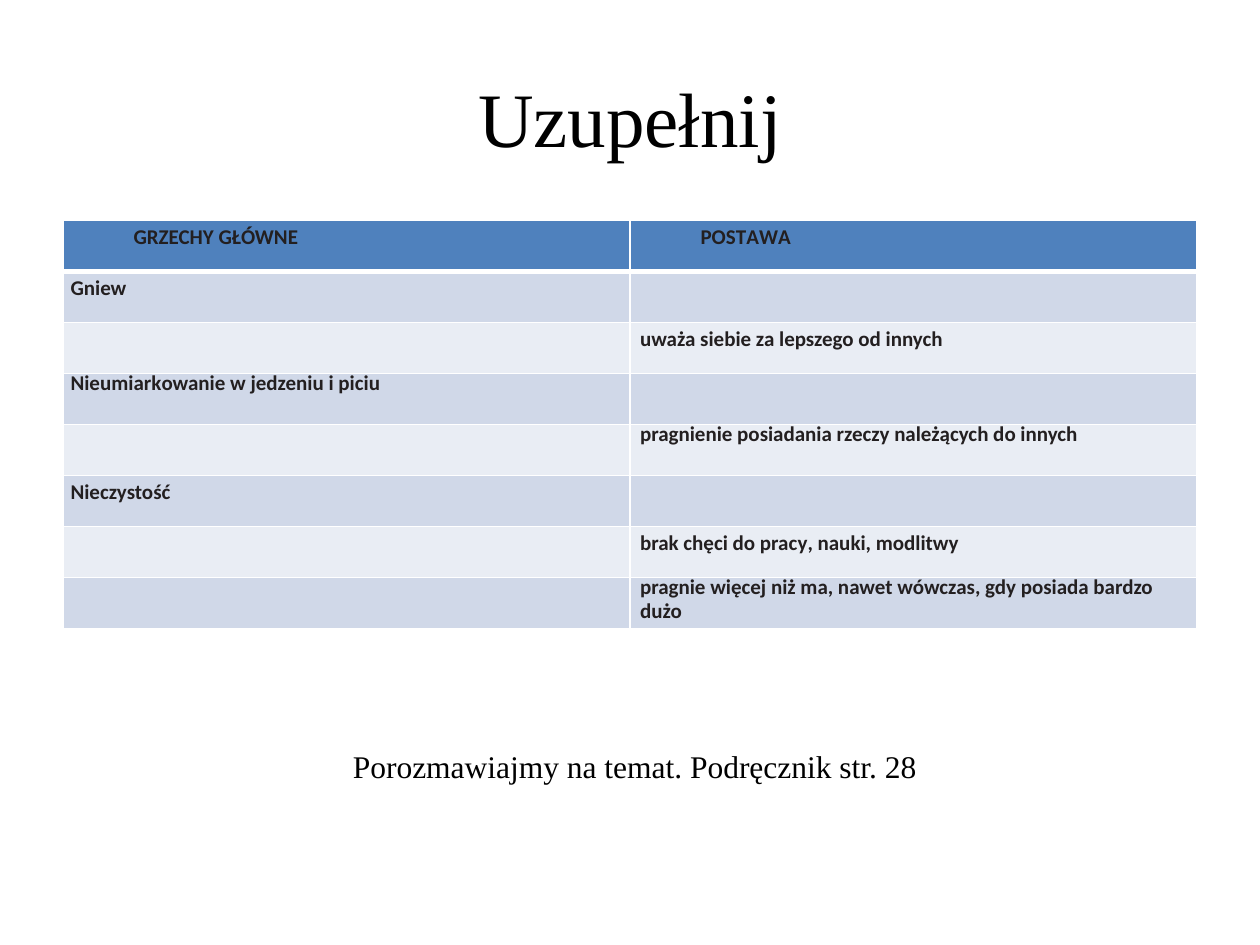
from dataclasses import dataclass

from lxml import etree
from pptx import Presentation
from pptx.dml.color import RGBColor
from pptx.enum.text import MSO_ANCHOR, PP_ALIGN
from pptx.oxml.ns import qn
from pptx.util import Inches, Pt

CENTER = PP_ALIGN.CENTER
MIDDLE = MSO_ANCHOR.MIDDLE
TOP = MSO_ANCHOR.TOP


@dataclass(frozen=True)
class Theme:
    serif: str = "Times New Roman"
    sans: str = "Calibri"
    black: str = "000000"
    ink: str = "231F20"
    white: str = "FFFFFF"
    header: str = "4F81BD"
    bands: tuple = ("D0D8E8", "E9EDF4")
    title_size: int = 44
    prompt_size: int = 18
    cell_size: int = 12
    loose: float = 1.15
    exact: Pt = Pt(13.2)


THEME = Theme()

HEADINGS = (
    [("GRZECHY GŁÓWNE", 0)],
    [("POS", 0), ("T", -0.8), ("A", -0.7), ("W", -0.8), ("A", 0)],
)
SIN, ATTITUDE = 0, 1
ENTRIES = [
    (SIN, THEME.loose, [("Gniew", 0)]),
    (ATTITUDE, THEME.loose, [("uważa siebie za lepszego od innych", 0)]),
    (SIN, THEME.exact,
     [("Nieumiar", 0), ("k", -0.2), ("owanie w jedzeniu i piciu", 0)]),
    (ATTITUDE, THEME.exact,
     [("pragnienie posiadania rzeczy należących do innych", 0)]),
    (SIN, THEME.loose, [("Nieczystość", 0)]),
    (ATTITUDE, THEME.loose,
     [("brak chęci do prac", 0), ("y", -0.9), (", nauki, modlitwy", 0)]),
    (ATTITUDE, THEME.exact,
     [("pragnie więcej niż ma, nawet wówczas, gdy posiada bardzo dużo", 0)]),
]
HEADING_INDENT = 0.56
ENTRY_INDENTS = (0.06, 0.08)


def add_run(paragraph, text, font_name, size, color, bold=False, spacing=0):
    run = paragraph.add_run()
    run.text = text
    run.font.name = font_name
    run.font.size = Pt(size)
    run.font.bold = bold
    run.font.color.rgb = RGBColor.from_string(color)
    if spacing:
        run.font._element.set("spc", str(round(spacing * 100)))


def add_centered_line(slide, box, text, size, anchor):
    line = slide.shapes.add_textbox(*map(Inches, box))
    frame = line.text_frame
    frame.word_wrap = True
    frame.vertical_anchor = anchor
    paragraph = frame.paragraphs[0]
    paragraph.alignment = CENTER
    add_run(paragraph, text, THEME.serif, size, THEME.black)


def style_cell(cell, fill, bottom_width=1):
    cell.margin_left = cell.margin_right = 0
    cell.margin_top = cell.margin_bottom = 0
    properties = cell._tc.get_or_add_tcPr()
    for side, width in (("L", 1), ("R", 1), ("T", 1), ("B", bottom_width)):
        border = etree.SubElement(properties, qn(f"a:ln{side}"), w=str(Pt(width)))
        paint = etree.SubElement(border, qn("a:solidFill"))
        etree.SubElement(paint, qn("a:srgbClr"), val=THEME.white)
    cell.fill.solid()
    cell.fill.fore_color.rgb = RGBColor.from_string(fill)


def write_cell(cell, runs, indent, line_spacing):
    paragraph = cell.text_frame.paragraphs[0]
    paragraph.line_spacing = line_spacing
    properties = paragraph._p.get_or_add_pPr()
    properties.set("marL", str(Inches(indent)))
    properties.set("indent", "0")
    for text, spacing in runs:
        add_run(paragraph, text, THEME.sans, THEME.cell_size, THEME.ink, True, spacing)


def add_sins_table(slide, box):
    left, top, width, height = map(Inches, box)
    row_count = len(ENTRIES) + 1
    table = slide.shapes.add_table(
        row_count, len(HEADINGS), left, top, width, height).table
    for column in table.columns:
        column.width = width // len(HEADINGS)
    for row in table.rows:
        row.height = height // row_count

    for column, heading in enumerate(HEADINGS):
        cell = table.cell(0, column)
        style_cell(cell, THEME.header, bottom_width=3)
        write_cell(cell, heading, HEADING_INDENT, THEME.loose)

    for index, (filled, line_spacing, runs) in enumerate(ENTRIES):
        for column in (SIN, ATTITUDE):
            style_cell(table.cell(index + 1, column), THEME.bands[index % 2])
        write_cell(table.cell(index + 1, filled), runs,
                   ENTRY_INDENTS[filled], line_spacing)


def main():
    presentation = Presentation()
    presentation.slide_width = Inches(10)
    presentation.slide_height = Inches(7.5)
    slide = presentation.slides.add_slide(presentation.slide_layouts[6])
    add_centered_line(slide, (0.5, 0.3, 9, 1.25), "Uzupełnij",
                      THEME.title_size, MIDDLE)
    add_sins_table(slide, (0.5, 1.75, 9, 3.24))
    add_centered_line(slide, (0.51, 5.88, 9.06, 0.4),
                      "Porozmawiajmy na temat. Podręcznik str. 28",
                      THEME.prompt_size, TOP)
    presentation.save("out.pptx")


if __name__ == "__main__":
    main()
